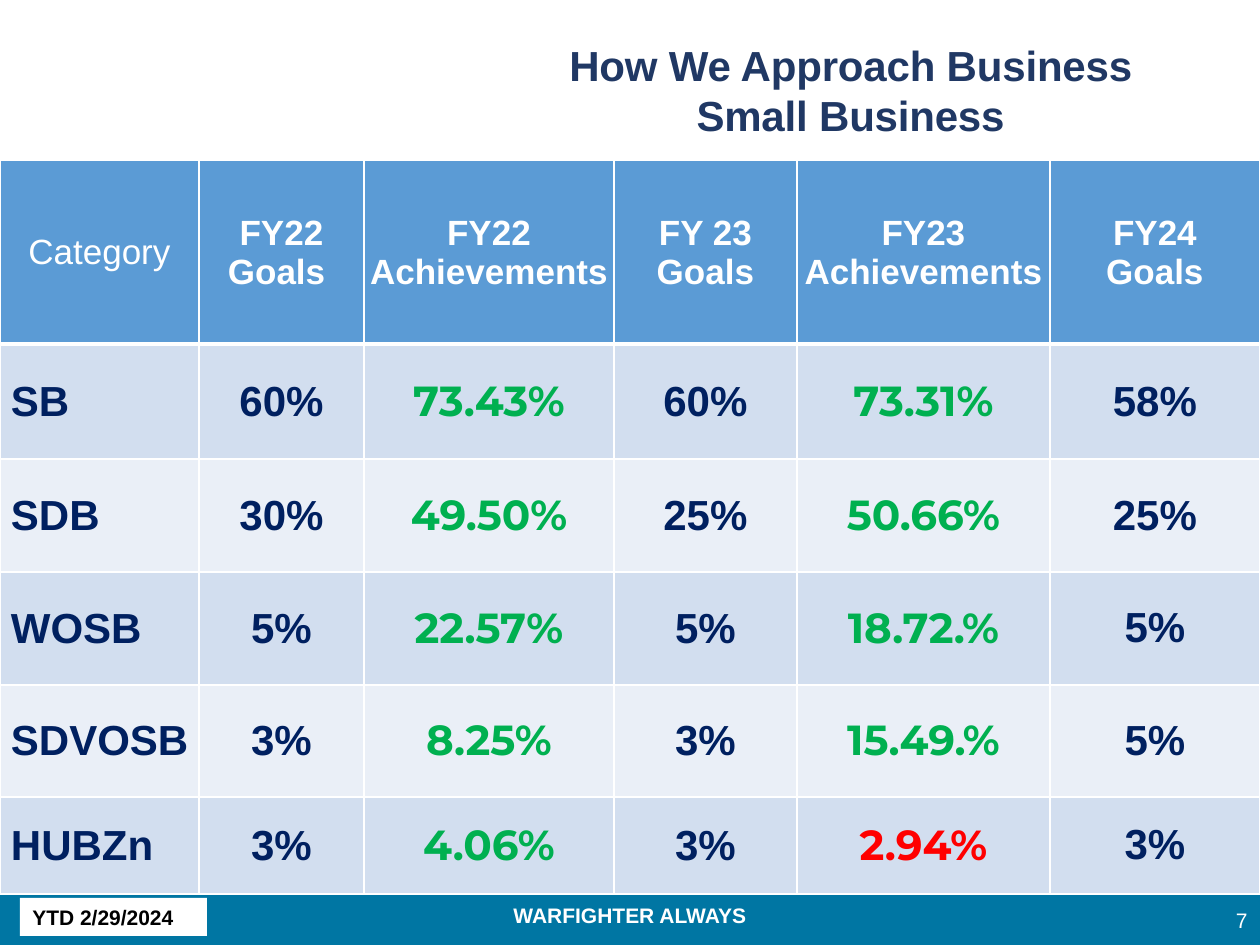
from lxml.etree import SubElement
from pptx import Presentation
from pptx.dml.color import RGBColor
from pptx.enum.shapes import MSO_SHAPE as Shape
from pptx.enum.text import MSO_ANCHOR as Anchor, PP_ALIGN as Align
from pptx.oxml import parse_xml
from pptx.oxml.ns import nsdecls, qn
from pptx.util import Emu, Pt

COLORS = {
    "white": "FFFFFF", "black": "000000", "footer": "0076A3",
    "title": "203864", "header": "5B9BD5", "navy": "002060",
    "green": "00B050", "red": "FF0000", "band_dark": "D2DEEF", "band_light": "EAEFF7",
}


def px(length):
    return Emu(round(length * 914400 / 126))


def write(frame, text, color, align, anchor=Anchor.TOP, **font_values):
    """Fill a text frame, one paragraph per line, in one format."""
    frame.word_wrap = True
    frame.vertical_anchor = anchor
    frame.text = text
    for paragraph in frame.paragraphs:
        paragraph.alignment = align
        for run in paragraph.runs:
            run.font.color.rgb = RGBColor.from_string(COLORS[color])
            for key, value in ({"name": "Arial", "bold": True} | font_values).items():
                setattr(run.font, key, value)


prs = Presentation()
prs.slide_width, prs.slide_height = px(1260), px(945)
slide = prs.slides.add_slide(prs.slide_layouts[5])
shapes = slide.shapes

# Title
title = shapes.title
title.left, title.top, title.width, title.height = px(504), px(33), px(693), px(113)
write(title.text_frame, "How We Approach Business Small Business", "title",
      Align.CENTER, Anchor.MIDDLE, size=Pt(24))
title.text_frame.paragraphs[0].runs[0].font._element.set("spc", "-10")

# Footer bar and date tag
footer_boxes = [
    ("footer", (0, 895, 1260, 50), ""),
    ("white", (20, 898, 187, 38), "YTD 2/29/2024"),
]
for color, box, text in footer_boxes:
    panel = shapes.add_shape(Shape.RECTANGLE, *map(px, box))
    panel.shadow.inherit = False
    panel.fill.solid()
    panel.fill.fore_color.rgb = RGBColor.from_string(COLORS[color])
    panel.line.fill.background()
    if text:
        write(panel.text_frame, text, "black", Align.LEFT, size=Pt(12))

# Motto and page number
footer_texts = [
    ("WARFIGHTER ALWAYS", (0, 896, 1260, 38), Align.CENTER, Anchor.TOP, True),
    ("7", (1197, 895, 63, 50), Align.RIGHT, Anchor.MIDDLE, False),
]
for text, box, align, anchor, bold in footer_texts:
    label = shapes.add_textbox(*map(px, box))
    write(label.text_frame, text, "white", align, anchor, size=Pt(12), bold=bold)

# Goals and achievements by category
goals = [
    ["Category", "FY22 Goals ", "FY22 Achievements", "FY 23 Goals",
     "FY23\nAchievements", "FY24\nGoals"],
    ["SB", "60%", "73.43%", "60%", "73.31%", "58%"],
    ["SDB", "30%", "49.50%", "25%", "50.66%", "25%"],
    ["WOSB", "5%", "22.57%", "5%", "18.72.%", "5%"],
    ["SDVOSB", "3%", "8.25%", "3%", "15.49.%", "5%"],
    ["HUBZn", "3%", "4.06%", "3%", "2.94%", "3%"],
]
column_widths = [199, 165, 250, 183, 253, 210]
row_heights = [184, 115, 113, 113, 112, 97]
achievement_columns = (2, 4)
missed_goals = {(5, 4)}

table = shapes.add_table(len(row_heights), len(column_widths), 0, px(160),
                         px(sum(column_widths)), px(sum(row_heights))).table
for column, width in zip(table.columns, column_widths):
    column.width = px(width)
for row, height in zip(table.rows, row_heights):
    row.height = px(height)

for r, values in enumerate(goals):
    for c, value in enumerate(values):
        cell = table.cell(r, c)
        is_header = r == 0
        is_achievement = not is_header and c in achievement_columns

        # Margins
        if not is_header and c in (*achievement_columns, 5):
            margins = (13, 6, 13, 6)
        else:
            margins = (11 if c == 0 and not is_header else 1, 1, 1, 0)
        for side, margin in zip(("left", "top", "right", "bottom"), margins):
            setattr(cell, f"margin_{side}", px(margin))

        # Text
        color, font_values = "navy", {"size": Pt(24)}
        if is_header:
            color, font_values = "white", {"size": Pt(20), "bold": c > 0}
        elif is_achievement:
            color = "red" if (r, c) in missed_goals else "green"
            font_values["name"] = "Montserrat"
        align = Align.LEFT if c == 0 and not is_header else Align.CENTER
        write(cell.text_frame, value, color, align, **font_values)
        cell.vertical_anchor = Anchor.MIDDLE
        if is_achievement:
            outline = parse_xml(
                f'<a:ln {nsdecls("a")} w="3175"><a:solidFill>'
                f'<a:srgbClr val="{COLORS["black"]}"/></a:solidFill></a:ln>')
            cell.text_frame.paragraphs[0].runs[0].font._element.insert(0, outline)

        # Borders and fill
        cell_format = cell._tc.get_or_add_tcPr()
        for side in "LRTB":
            points = 3 if is_header and side == "B" else 1
            border = SubElement(cell_format, qn(f"a:ln{side}"), w=str(Pt(points)))
            border_fill = SubElement(border, qn("a:solidFill"))
            SubElement(border_fill, qn("a:srgbClr"), val=COLORS["white"])
        band = "header" if is_header else "band_dark" if r % 2 else "band_light"
        cell.fill.solid()
        cell.fill.fore_color.rgb = RGBColor.from_string(COLORS[band])

prs.save("out.pptx")
